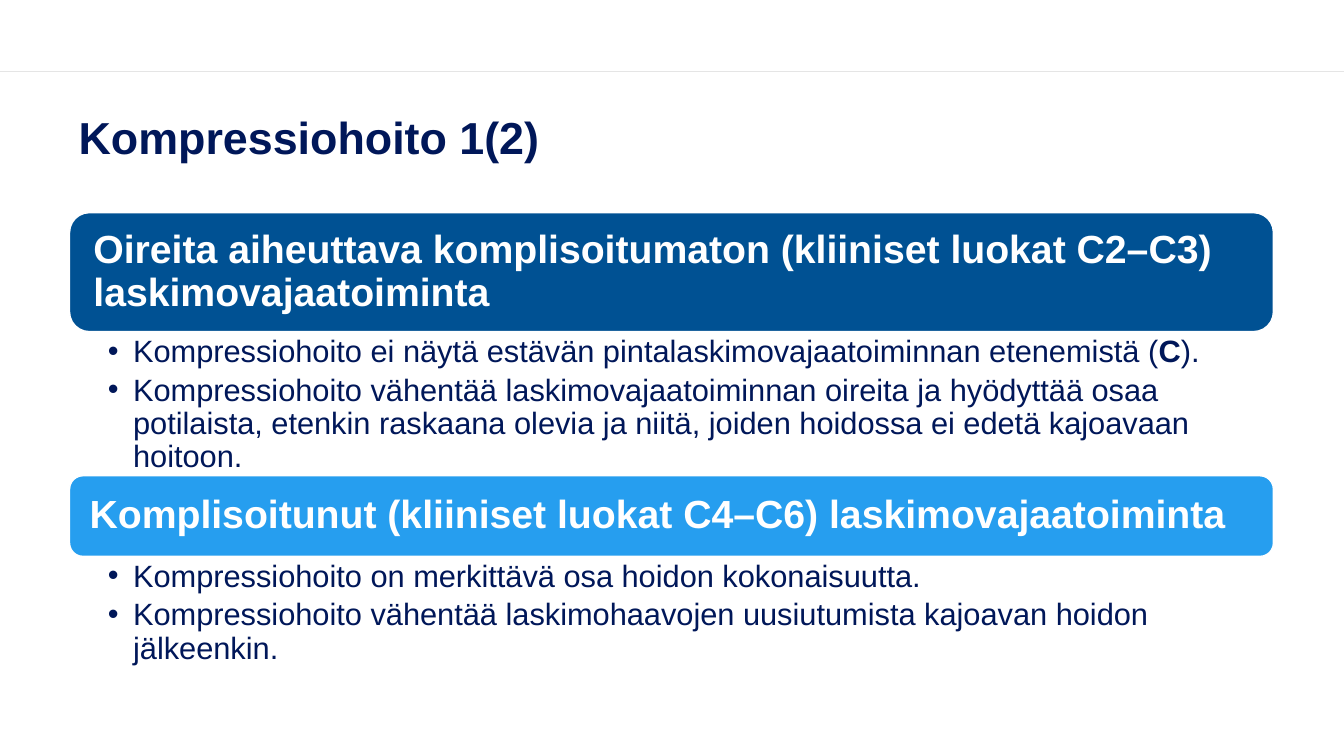
"""Build the slide on compression therapy for venous insufficiency."""
from lxml import etree
from pptx import Presentation
from pptx.dml.color import RGBColor
from pptx.enum.shapes import MSO_CONNECTOR, MSO_SHAPE
from pptx.enum.text import MSO_ANCHOR, MSO_AUTO_SIZE, PP_ALIGN
from pptx.oxml.ns import qn
from pptx.util import Inches, Pt

STRAIGHT, ROUNDED = MSO_CONNECTOR.STRAIGHT, MSO_SHAPE.ROUNDED_RECTANGLE
TOP, MIDDLE, LEFT = MSO_ANCHOR.TOP, MSO_ANCHOR.MIDDLE, PP_ALIGN.LEFT
NO_FIT = MSO_AUTO_SIZE.NONE
TWO_CONTENT = 3

TITLE = "Kompressiohoito 1(2)"
SECTIONS = [
    {
        "heading": "Oireita aiheuttava komplisoitumaton (kliiniset luokat C2–C3) laskimovajaatoiminta",
        "fill": "005193", "banner_height": 1.18, "list_height": 1.43,
        "points": [
            [("Kompressiohoito ei näytä estävän pintalaskimovajaatoiminnan etenemistä (", False),
             ("C", True), (").", False)],
            [("Kompressiohoito vähentää laskimovajaatoiminnan oireita ja hyödyttää osaa "
              "potilaista, etenkin raskaana olevia ja niitä, joiden hoidossa ei edetä "
              "kajoavaan hoitoon.", False)],
        ],
    },
    {
        "heading": "Komplisoitunut (kliiniset luokat C4–C6) laskimovajaatoiminta",
        "fill": "269EEF", "banner_height": 0.8, "list_height": 1.11,
        "points": [
            [("Kompressiohoito on merkittävä osa hoidon kokonaisuutta.", False)],
            [("Kompressiohoito vähentää laskimohaavojen uusiutumista kajoavan hoidon "
              "jälkeenkin.", False)],
        ],
    },
]
NAVY, WHITE, RULE_GREY = "001759", "FFFFFF", "E5E5E5"
SLIDE_WIDTH, SLIDE_HEIGHT = 13.33, 7.5
MARGIN, CONTENT_WIDTH, CONTENT_TOP = 0.69, 11.94, 2.11


def color(hex_value):
    return RGBColor.from_string(hex_value)


def place(shape, left, top, width, height):
    shape.left, shape.top = Inches(left), Inches(top)
    shape.width, shape.height = Inches(width), Inches(height)


def set_frame(frame, anchor, left, top, right, bottom):
    frame.word_wrap, frame.auto_size, frame.vertical_anchor = True, NO_FIT, anchor
    frame.margin_left, frame.margin_top = Inches(left), Inches(top)
    frame.margin_right, frame.margin_bottom = Inches(right), Inches(bottom)


def style(paragraph, size, ink, bold=None, after=0):
    paragraph.alignment, paragraph.line_spacing = LEFT, 0.9
    paragraph.space_before, paragraph.space_after = Pt(0), Pt(after)
    font = paragraph.font
    font.name, font.size, font.bold = "Arial", Pt(size), bold
    font.color.rgb = color(ink)


def add_rule(slide, y):
    rule = slide.shapes.add_connector(STRAIGHT, 0, Inches(y), Inches(SLIDE_WIDTH), Inches(y))
    rule.line.color.rgb, rule.line.width = color(RULE_GREY), Pt(1)
    etree.SubElement(rule.element.spPr, qn("a:effectLst"))


def add_banner(slide, section, top):
    height = section["banner_height"]
    banner = slide.shapes.add_shape(
        ROUNDED, Inches(MARGIN), Inches(top), Inches(CONTENT_WIDTH), Inches(height))
    banner.shadow.inherit = False
    banner.fill.solid()
    banner.fill.fore_color.rgb = color(section["fill"])
    banner.line.color.rgb, banner.line.width = color(WHITE), Pt(1)
    side = 0.12 + 0.05 * height
    set_frame(banner.text_frame, MIDDLE, side, 0.12, side, 0.12)
    banner.text_frame.text = section["heading"]
    style(banner.text_frame.paragraphs[0], 28, WHITE, bold=True)


def fill_list(body, section, top):
    place(body, MARGIN, top, CONTENT_WIDTH, section["list_height"])
    frame = body.text_frame
    set_frame(frame, TOP, 0.38, 0.04, 0.22, 0.04)
    for number, point in enumerate(section["points"]):
        paragraph = frame.add_paragraph() if number else frame.paragraphs[0]
        properties = paragraph._p.get_or_add_pPr()
        properties.set("marL", str(Inches(0.25)))
        properties.set("indent", str(Inches(-0.25)))
        style(paragraph, 22, NAVY, after=4)
        for text, bold in point:
            run = paragraph.add_run()
            run.text, run.font.bold = text, bold


def main():
    deck = Presentation()
    deck.slide_width, deck.slide_height = Inches(SLIDE_WIDTH), Inches(SLIDE_HEIGHT)
    slide = deck.slides.add_slide(deck.slide_layouts[TWO_CONTENT])
    add_rule(slide, 0.71)

    title = slide.shapes.title
    place(title, 0.68, 0.93, CONTENT_WIDTH, 0.91)
    set_frame(title.text_frame, MIDDLE, 0.1, 0.05, 0.1, 0.05)
    title.text_frame.text = TITLE
    style(title.text_frame.paragraphs[0], 32, NAVY, bold=True)

    top = CONTENT_TOP
    for index, section in enumerate(SECTIONS, start=1):
        add_banner(slide, section, top)
        top += section["banner_height"]
        fill_list(slide.placeholders[index], section, top)
        top += section["list_height"]
    deck.save("out.pptx")


if __name__ == "__main__":
    main()
